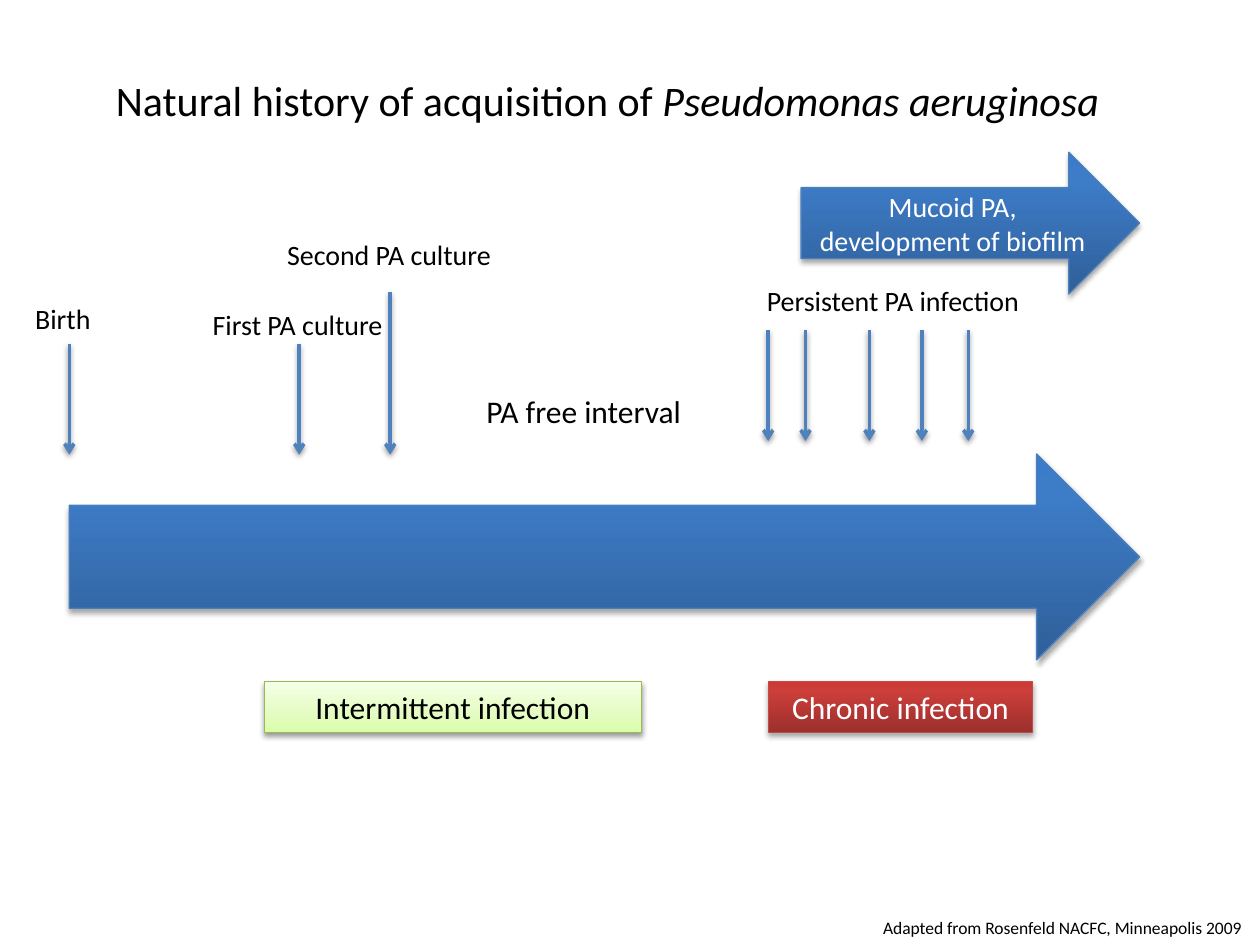
from pptx import Presentation
from pptx.dml.color import RGBColor
from pptx.enum.shapes import MSO_CONNECTOR, MSO_SHAPE
from pptx.enum.text import MSO_ANCHOR, PP_ALIGN
from pptx.oxml import parse_xml
from pptx.oxml.ns import nsdecls, qn
from pptx.util import Pt

BLACK = RGBColor(0x00, 0x00, 0x00)
WHITE = RGBColor(0xFF, 0xFF, 0xFF)
ARROW_BLUE = RGBColor(0x4F, 0x81, 0xBD)
BLUE_EDGE = RGBColor(0x4B, 0x7E, 0xBC)
GREEN_EDGE = RGBColor(0x98, 0xB9, 0x55)
RED_EDGE = RGBColor(0xBF, 0x4C, 0x48)
BLUE_STOPS = [(0, RGBColor(0x2F, 0x5F, 0x99)), (80, RGBColor(0x3D, 0x7C, 0xC7)),
              (100, RGBColor(0x3A, 0x7C, 0xCB))]
GREEN_STOPS = [(0, RGBColor(0xDA, 0xFD, 0xA7)), (35, RGBColor(0xE4, 0xFC, 0xC2)),
               (100, RGBColor(0xF5, 0xFF, 0xE7))]
RED_STOPS = [(0, RGBColor(0x9C, 0x2F, 0x2D)), (80, RGBColor(0xCB, 0x3E, 0x3A)),
             (100, RGBColor(0xCE, 0x3B, 0x37))]


class Builder:
    font = "Calibri"

    def __init__(self, slide):
        self.slide = slide

    def add_runs(self, tf, runs, size, color=BLACK, align=PP_ALIGN.LEFT):
        p = tf.paragraphs[0]
        p.alignment = align
        for text, italic in runs:
            r = p.add_run()
            r.text = text
            r.font.name = self.font
            r.font.size = Pt(size)
            r.font.italic = italic
            r.font.color.rgb = color

    def title(self, left, top, width, height, runs, size):
        sp = self.slide.shapes.title
        sp.left, sp.top, sp.width, sp.height = Pt(left), Pt(top), Pt(width), Pt(height)
        sp.text_frame.word_wrap = False
        sp.text_frame.vertical_anchor = MSO_ANCHOR.TOP
        self.add_runs(sp.text_frame, runs, size)

    def label(self, left, top, width, height, text, size, align=PP_ALIGN.LEFT):
        sp = self.slide.shapes.add_textbox(Pt(left), Pt(top), Pt(width), Pt(height))
        sp.text_frame.word_wrap = False
        self.add_runs(sp.text_frame, [(text, False)], size, align=align)

    def shadow(self, sp, opacity, distance):
        for old in sp.element.spPr.findall(qn("a:effectLst")):
            sp.element.spPr.remove(old)
        sp.element.spPr.append(parse_xml(
            f'<a:effectLst {nsdecls("a")}><a:outerShdw blurRad="{Pt(3.1)}" '
            f'dist="{Pt(distance)}" dir="5400000" rotWithShape="0">'
            f'<a:srgbClr val="000000"><a:alpha val="{opacity * 1000}"/></a:srgbClr>'
            '</a:outerShdw></a:effectLst>'))

    def block(self, kind, left, top, width, height, stops, edge,
              text="", size=18, color=WHITE, opacity=35, distance=1.8):
        sp = self.slide.shapes.add_shape(kind, Pt(left), Pt(top), Pt(width), Pt(height))
        sp.fill.gradient()
        sp.fill.gradient_angle = 90
        stop_list = sp.element.spPr.find(".//" + qn("a:gsLst"))
        for old in list(stop_list):
            stop_list.remove(old)
        for position, rgb in stops:
            stop_list.append(parse_xml(
                f'<a:gs {nsdecls("a")} pos="{position * 1000}">'
                f'<a:srgbClr val="{rgb}"/></a:gs>'))
        sp.line.color.rgb = edge
        sp.line.width = Pt(0.75)
        self.shadow(sp, opacity, distance)
        if text:
            sp.text_frame.word_wrap = True
            sp.text_frame.vertical_anchor = MSO_ANCHOR.MIDDLE
            self.add_runs(sp.text_frame, [(text, False)], size, color, PP_ALIGN.CENTER)

    def down_arrow(self, x, top, bottom):
        line = self.slide.shapes.add_connector(
            MSO_CONNECTOR.STRAIGHT, Pt(x), Pt(top), Pt(x), Pt(bottom))
        line.line.color.rgb = ARROW_BLUE
        line.line.width = Pt(2)
        line.element.spPr.find(qn("a:ln")).append(
            parse_xml(f'<a:tailEnd {nsdecls("a")} type="arrow"/>'))
        self.shadow(line, 38, 1.6)


def main():
    prs = Presentation()
    prs.slide_width, prs.slide_height = Pt(720), Pt(540)
    s = Builder(prs.slides.add_slide(prs.slide_layouts[5]))

    s.title(59, 38.9, 586.8, 36.4, [("Natural history of acquisition of ", False),
                                    ("Pseudomonas aeruginosa", True)], 24)

    s.block(MSO_SHAPE.RIGHT_ARROW, 39.6, 259.4, 611.6, 117.6, BLUE_STOPS, BLUE_EDGE)
    for x, top in [(39.6, 196.4), (171, 196.4), (223, 167)]:
        s.down_arrow(x, top, 259.8)
    for x in (439, 460.3, 496.8, 526.8, 553.3):
        s.down_arrow(x, 188.6, 252)
    s.block(MSO_SHAPE.RIGHT_ARROW, 457.8, 87, 193.4, 81, BLUE_STOPS, BLUE_EDGE,
            "Mucoid PA, development of biofilm", 16)

    s.label(12.5, 168.8, 46.8, 26.6, "Birth", 16, PP_ALIGN.CENTER)
    s.label(114.5, 172.4, 113, 26.6, "First PA culture", 16)
    s.label(157, 132, 132.5, 26.6, "Second PA culture", 16)
    s.label(270.9, 220.6, 126.7, 29, "PA free interval", 18)
    s.label(430, 158.7, 160.6, 26.6, "Persistent PA infection", 16, PP_ALIGN.CENTER)

    s.block(MSO_SHAPE.RECTANGLE, 151, 389.5, 215.4, 29, GREEN_STOPS, GREEN_EDGE,
            "Intermittent infection", color=BLACK, opacity=38, distance=1.6)
    s.block(MSO_SHAPE.RECTANGLE, 439, 389.5, 151.2, 29, RED_STOPS, RED_EDGE,
            "Chronic infection")
    s.label(497.5, 520.6, 222.5, 19.4, "Adapted from Rosenfeld NACFC, Minneapolis 2009", 10)

    prs.save("out.pptx")


if __name__ == "__main__":
    main()
